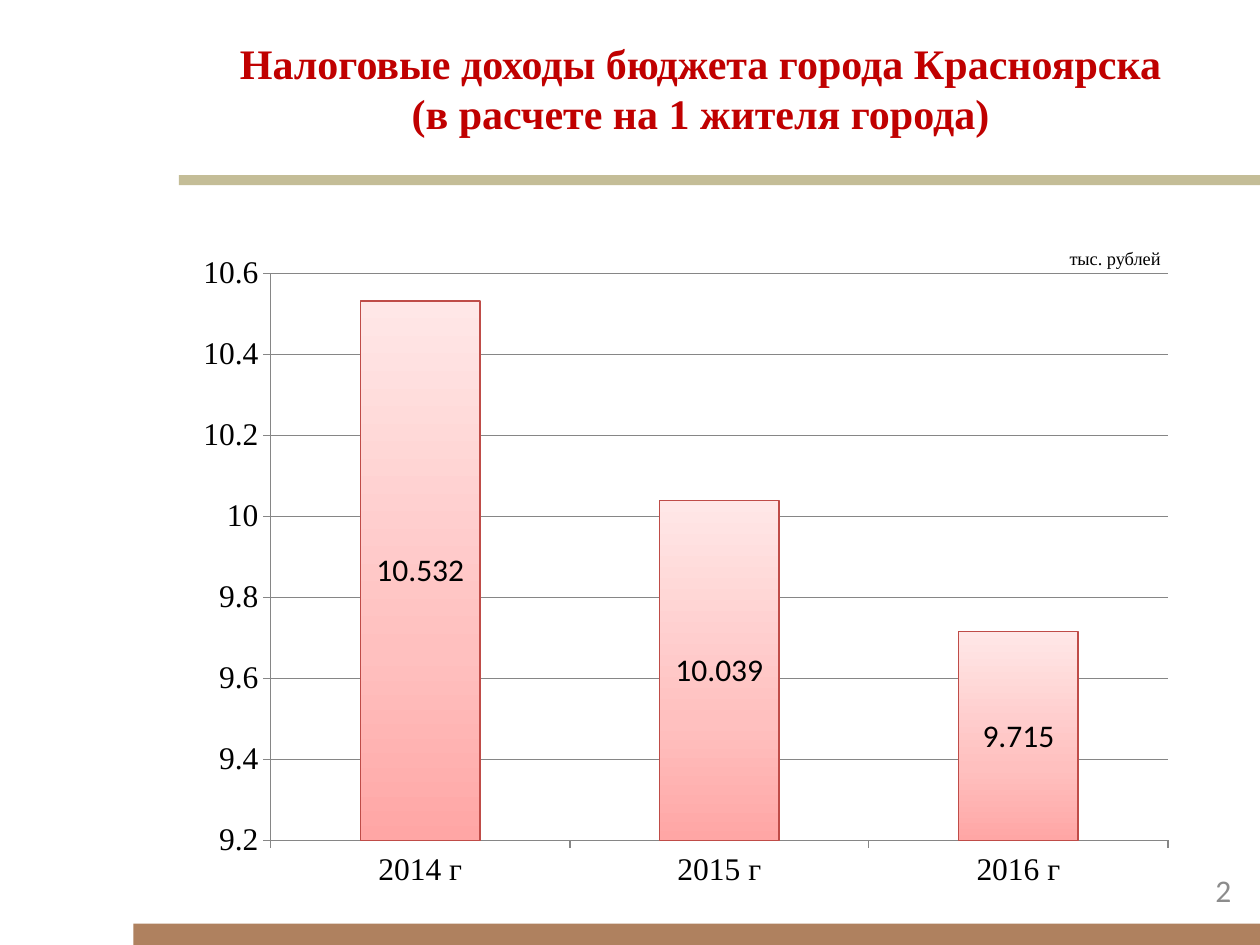
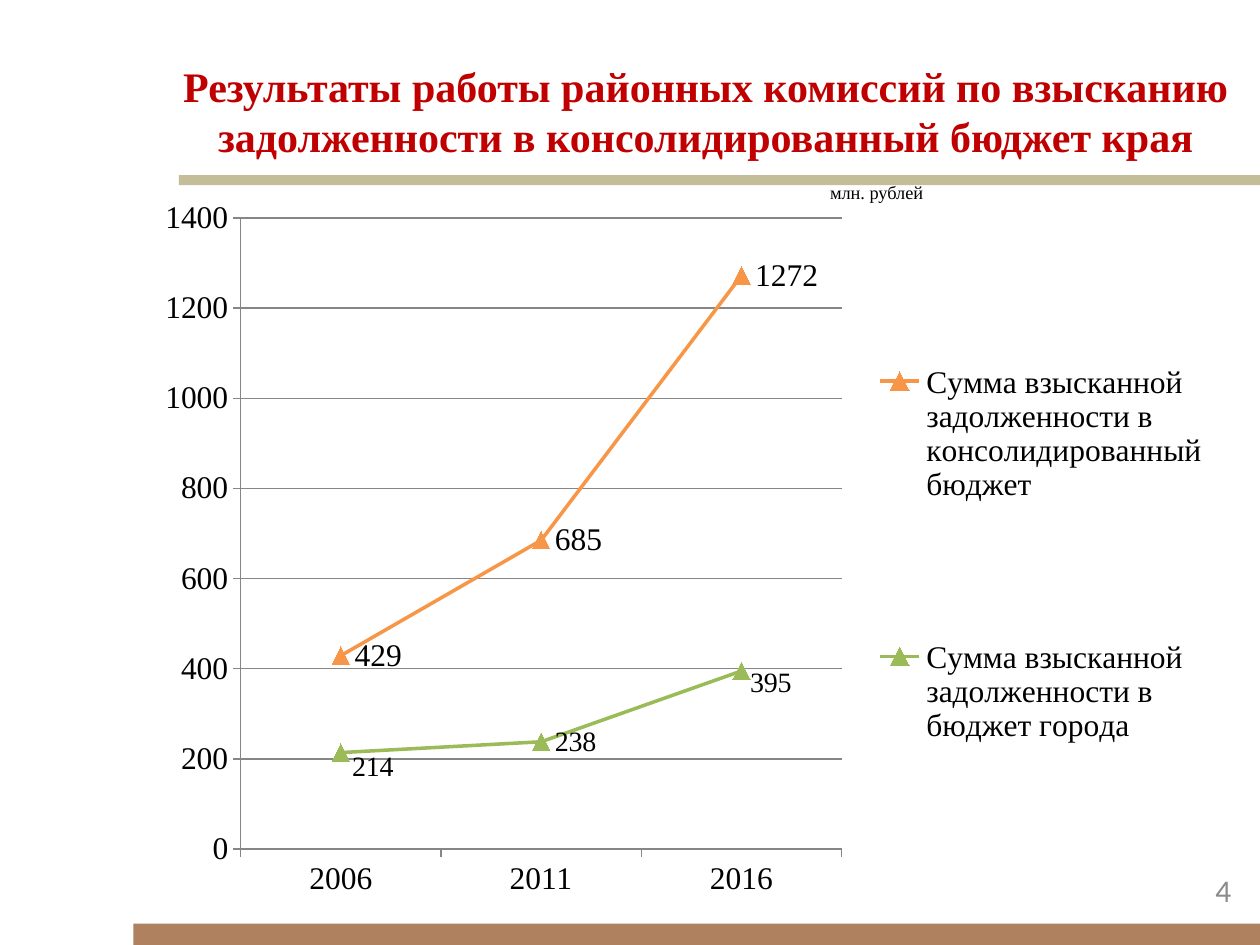
from lxml import etree
from pptx import Presentation
from pptx.chart.data import CategoryChartData
from pptx.dml.color import RGBColor
from pptx.enum.chart import (XL_CHART_TYPE, XL_LABEL_POSITION, XL_LEGEND_POSITION,
                             XL_MARKER_STYLE, XL_TICK_MARK)
from pptx.enum.shapes import MSO_SHAPE
from pptx.enum.text import MSO_ANCHOR, MSO_AUTO_SIZE, PP_ALIGN
from pptx.oxml.ns import qn
from pptx.util import Inches, Pt

COLUMNS, LINES = XL_CHART_TYPE.COLUMN_STACKED, XL_CHART_TYPE.LINE_MARKERS
CENTER, RIGHT = XL_LABEL_POSITION.CENTER, XL_LABEL_POSITION.RIGHT
TRIANGLE = XL_MARKER_STYLE.TRIANGLE
OUTSIDE, NO_TICK = XL_TICK_MARK.OUTSIDE, XL_TICK_MARK.NONE
MIDDLE, BOTTOM = MSO_ANCHOR.MIDDLE, MSO_ANCHOR.BOTTOM

SERIF, SANS = "Times New Roman", "Calibri"
COLORS = {
    "title": "C00000", "text": "000000", "number": "8C8C8C", "axis": "868686",
    "divider": "C4BD97", "footer": "AF815F", "column_edge": "BF4C48",
    "region": "F79646", "city": "9BBB59",
}
COLUMN_STOPS = [(0, "FFA6A5"), (35, "FFC0BF"), (100, "FFE7E7")]


def rgb(name):
    return RGBColor.from_string(COLORS[name])


def style_font(font, size, color="text", name=SERIF, bold=False):
    font.size, font.name, font.bold = Pt(size), name, bold
    font.color.rgb = rgb(color)


def add_band(page, box, color):
    band = page.shapes.add_shape(MSO_SHAPE.RECTANGLE, *map(Inches, box))
    band.shadow.inherit = False
    band.fill.solid()
    band.fill.fore_color.rgb = rgb(color)
    band.line.fill.background()


def add_label(page, box, text, size, color="text", name=SERIF, align=PP_ALIGN.LEFT,
              anchor=MSO_ANCHOR.TOP):
    frame = page.shapes.add_textbox(*map(Inches, box)).text_frame
    frame.word_wrap = True
    frame.vertical_anchor = anchor
    para = frame.paragraphs[0]
    para.text, para.alignment = text, align
    style_font(para.font, size, color, name)


def add_page(deck, title_box, title, anchor, number):
    """Slide with its bands, title and page number."""
    page = deck.slides.add_slide(deck.slide_layouts[5])
    add_band(page, (1.06, 7.33, 8.94, 0.17), "footer")
    add_band(page, (1.42, 1.39, 8.58, 0.08), "divider")
    heading = page.shapes.title
    heading.left, heading.top, heading.width, heading.height = map(Inches, title_box)
    frame = heading.text_frame
    frame.text = title
    frame.word_wrap = True
    frame.auto_size = MSO_AUTO_SIZE.NONE
    frame.vertical_anchor = anchor
    para = frame.paragraphs[0]
    para.alignment = PP_ALIGN.CENTER
    style_font(para.font, 24, "title", bold=True)
    add_label(page, (9.36, 6.86, 0.51, 0.4), number, 18, "number", SANS,
              PP_ALIGN.RIGHT, MIDDLE)
    return page


def set_layout(parent, index, outer, inner, target=None):
    """Place a chart part at the box inner, within the chart box outer."""
    for old in parent.findall(qn("c:layout")):
        parent.remove(old)
    layout = etree.Element(qn("c:layout"))
    parent.insert(index, layout)
    manual = etree.SubElement(layout, qn("c:manualLayout"))
    settings = [("layoutTarget", target)] if target else []
    settings += [("xMode", "edge"), ("yMode", "edge"),
                 ("x", (inner[0] - outer[0]) / outer[2]),
                 ("y", (inner[1] - outer[1]) / outer[3]),
                 ("w", inner[2] / outer[2]), ("h", inner[3] / outer[3])]
    for tag, value in settings:
        etree.SubElement(manual, qn(f"c:{tag}"), val=str(value))


def shift_label(label, outer, across, down):
    """Move one data label from its normal place."""
    element = label._get_or_add_dLbl()
    layout = etree.Element(qn("c:layout"))
    element.insert(1, layout)
    manual = etree.SubElement(layout, qn("c:manualLayout"))
    etree.SubElement(manual, qn("c:x"), val=str(across / outer[2]))
    etree.SubElement(manual, qn("c:y"), val=str(down / outer[3]))


def add_axis_chart(page, kind, box, plot_box, categories, series, scale):
    """Chart with the shared axis style; scale is minimum, maximum and step."""
    data = CategoryChartData()
    data.categories = categories
    for name, values in series:
        data.add_series(name, values)
    chart = page.shapes.add_chart(kind, *map(Inches, box), data).chart
    chart.has_title = chart.has_legend = False
    style_font(chart.font, 18)
    for axis in (chart.category_axis, chart.value_axis):
        axis.major_tick_mark, axis.minor_tick_mark = OUTSIDE, NO_TICK
        style_font(axis.tick_labels.font, 18)
        axis.format.line.color.rgb = rgb("axis")
        axis.format.line.width = Pt(0.75)
    values_axis = chart.value_axis
    values_axis.minimum_scale, values_axis.maximum_scale, values_axis.major_unit = scale
    values_axis.has_major_gridlines = True
    grid = values_axis.major_gridlines.format.line
    grid.color.rgb, grid.width = rgb("axis"), Pt(0.75)
    plot_area = chart._chartSpace.chart.plotArea
    set_layout(plot_area, 0, box, plot_box, "inner")
    return chart


def show_values(series, size, position, name=SERIF):
    labels = series.data_labels
    labels.show_value = True
    labels.position = position
    style_font(labels.font, size, name=name)


def add_income_chart(page, box):
    left, top, width, height = box
    chart = add_axis_chart(
        page, COLUMNS, box, (left + 0.69, top + 0.23, width - 0.86, height - 0.71),
        ["2014 г", "2015 г", "2016 г"], [("Series 1", (10.532, 10.039, 9.715))],
        (9.2, 10.6, 0.2))
    plot = chart.plots[0]
    plot.gap_width, plot.overlap, plot.vary_by_categories = 150, 100, False
    columns = plot.series[0]
    show_values(columns, 18, CENTER, SANS)
    columns.format.line.color.rgb = rgb("column_edge")
    columns.format.line.width = Pt(0.75)
    # Three-step gradient, darkest at the foot
    fill = columns.format.fill
    fill.gradient()
    fill.gradient_angle = 90
    stops = next(columns._element.iter(qn("a:gsLst")))
    for old in list(stops):
        stops.remove(old)
    for percent, color in COLUMN_STOPS:
        stop = etree.SubElement(stops, qn("a:gs"), pos=str(percent * 1000))
        etree.SubElement(stop, qn("a:srgbClr"), val=color)


def add_debt_chart(page, box):
    left, top, width, height = box
    chart = add_axis_chart(
        page, LINES, box, (left + 0.77, top + 0.25, 4.77, height - 0.73),
        ["2006", "2011", "2016"],
        [("Сумма взысканной задолженности в консолидированный бюджет", (429, 685, 1272)),
         ("Сумма взысканной задолженности в бюджет города", (214, 238, 395))],
        (0, 1400, 200))
    chart.plots[0].vary_by_categories = False
    region, city = chart.plots[0].series
    for series, color, size in ((region, "region", 18), (city, "city", 16)):
        series.smooth = False
        series.format.line.color.rgb = rgb(color)
        series.format.line.width = Pt(2)
        marker = series.marker
        marker.style, marker.size = TRIANGLE, 10
        marker.format.fill.solid()
        marker.format.fill.fore_color.rgb = rgb(color)
        marker.format.line.color.rgb = rgb(color)
        show_values(series, size, RIGHT)
    # Labels that sit lower than their markers
    for index, across, down in ((0, -0.02, 0.12), (2, -0.04, 0.1)):
        label = city.points[index].data_label
        style_font(label.font, 16)
        label.position = RIGHT
        shift_label(label, box, across, down)
    # Legend
    chart.has_legend = True
    legend = chart.legend
    legend.position = XL_LEGEND_POSITION.RIGHT
    legend.include_in_layout = False
    style_font(legend.font, 18)
    set_layout(legend._element, 1, box, (left + 5.77, top + 0.32, width - 5.8, 5.2))


def income_slide(deck):
    page = add_page(deck, (1.17, 0.03, 8.78, 1.33),
                    "Налоговые доходы бюджета города Красноярска\v"
                    "(в расчете на 1 жителя города)", MIDDLE, "2")
    add_income_chart(page, (1.46, 1.94, 7.98, 5.21))
    add_label(page, (8.39, 1.91, 1.3, 0.28), "тыс. рублей", 10.5)


def debt_slide(deck):
    page = add_page(deck, (1.17, 0, 8.86, 1.33),
                    "Результаты работы районных комиссий по взысканию "
                    "задолженности в консолидированный бюджет края", BOTTOM, "4")
    add_debt_chart(page, (1.14, 1.48, 8.5, 5.74))
    add_label(page, (6.49, 1.39, 1.3, 0.28), "млн. рублей", 10.5)


def main():
    deck = Presentation()
    deck.slide_width, deck.slide_height = Inches(10), Inches(7.5)
    income_slide(deck)
    debt_slide(deck)
    deck.save("out.pptx")


if __name__ == "__main__":
    main()
